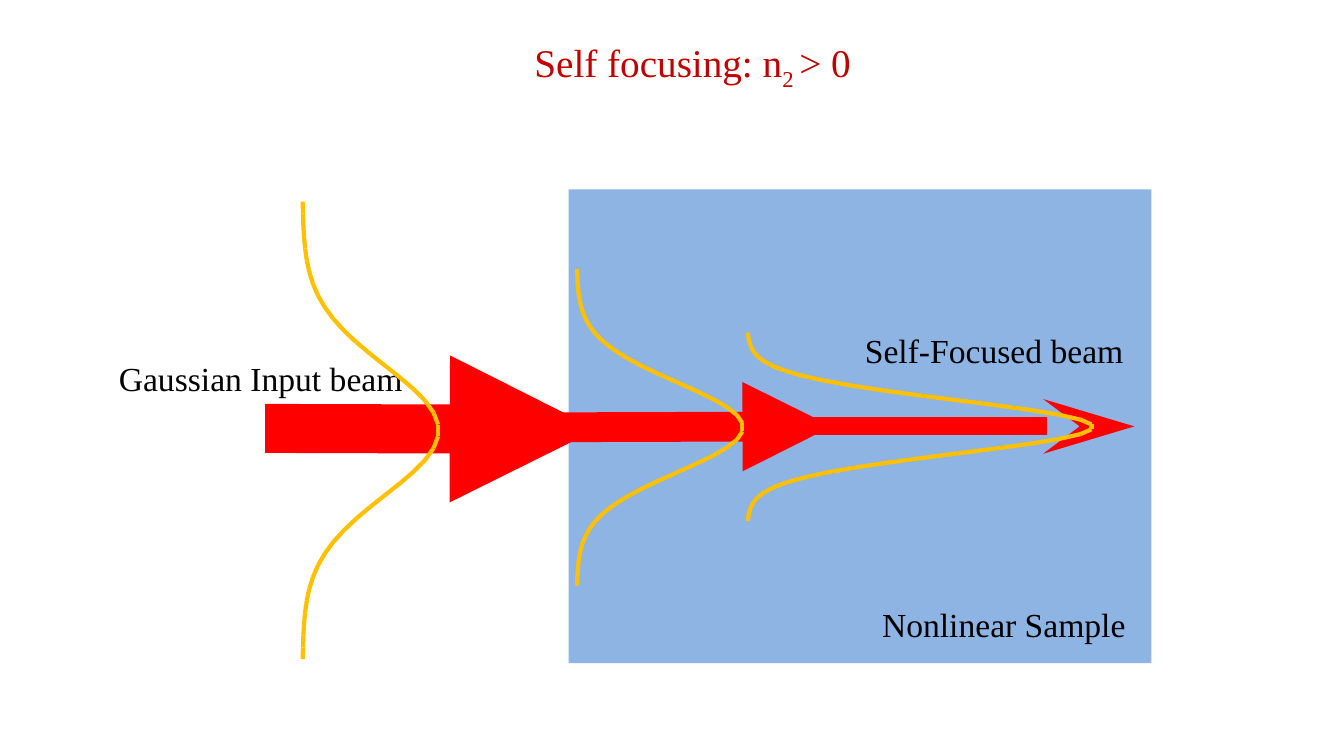
"""Build a slide that shows a Gaussian beam focusing itself in a nonlinear sample."""
import itertools
import math

import pptx
import pptx.dml.color
import pptx.enum.shapes
import pptx.enum.text
import pptx.oxml.ns
import pptx.util
from lxml import etree

Inches = pptx.util.Inches
Pt = pptx.util.Pt
RGBColor = pptx.dml.color.RGBColor

BLACK = RGBColor(0x00, 0x00, 0x00)
CRIMSON = RGBColor(0xC0, 0x00, 0x00)
RED = RGBColor(0xFF, 0x00, 0x00)
AMBER = RGBColor(0xFF, 0xC0, 0x00)
BLUE = RGBColor(0x8E, 0xB4, 0xE3)
FONT = "Times New Roman"
STEPS = 39
SPREAD = 0.283


def place(shape, left, top, width, height):
    shape.left, shape.top = Inches(left), Inches(top)
    shape.width, shape.height = Inches(width), Inches(height)


def style(para, size, color):
    para.alignment = pptx.enum.text.PP_ALIGN.LEFT
    para.font.name = FONT
    para.font.size = Pt(size)
    para.font.color.rgb = color


def set_title(slide):
    title = slide.shapes.title
    place(title, 5.2, 0.33, 3.4, 0.57)
    frame = title.text_frame
    frame.word_wrap = False
    frame.auto_size = pptx.enum.text.MSO_AUTO_SIZE.SHAPE_TO_FIT_TEXT
    frame.vertical_anchor = pptx.enum.text.MSO_ANCHOR.TOP
    para = frame.paragraphs[0]
    style(para, 28, CRIMSON)
    for text, base in (("Self focusing: n", 0), ("2 ", -25000), ("> 0", 0)):
        run = para.add_run()
        run.text = text
        if base:
            run.font._element.set("baseline", str(base))


def add_sample(slide):
    kind = pptx.enum.shapes.MSO_SHAPE.RECTANGLE
    sample = slide.shapes.add_shape(
        kind, Inches(5.64), Inches(1.88), Inches(5.78), Inches(4.7))
    sample.shadow.inherit = False
    sample.fill.solid()
    sample.fill.fore_color.rgb = BLUE
    sample.line.fill.background()


def add_label(slide, text, left, top, width, wrap=False):
    box = slide.shapes.add_textbox(
        Inches(left), Inches(top), Inches(width), Inches(0.51))
    frame = box.text_frame
    frame.word_wrap = wrap
    frame.auto_size = pptx.enum.text.MSO_AUTO_SIZE.SHAPE_TO_FIT_TEXT
    frame.text = text
    style(frame.paragraphs[0], 24, BLACK)


def add_line(shapes, start, end, color, width):
    kind = pptx.enum.shapes.MSO_CONNECTOR.STRAIGHT
    line = shapes.add_connector(
        kind, *(Inches(value) for value in start + end))
    line.line.color.rgb = color
    line.line.width = Pt(width)
    etree.SubElement(line._element.spPr, pptx.oxml.ns.qn("a:effectLst"))
    return line


def add_beam(slide, start, end, width, head, length="med"):
    beam = add_line(slide.shapes, start, end, RED, width)
    etree.SubElement(beam.line._get_or_add_ln(), pptx.oxml.ns.qn("a:tailEnd"),
                     type=head, w="med", len=length)


def add_curve(slide, base, peak, top, bottom):
    middle, half = (top + bottom) / 2, (bottom - top) / 2
    points = []
    for step in range(STEPS + 1):
        ratio = 2 * step / STEPS - 1
        bulge = math.exp(-((ratio / SPREAD) ** 2) / 2)
        points.append((base + (peak - base) * bulge, middle + half * ratio))
    group = slide.shapes.add_group_shape()
    for start, end in itertools.pairwise(points):
        add_line(group.shapes, start, end, AMBER, 3)


def main():
    deck = pptx.Presentation()
    deck.slide_width, deck.slide_height = Inches(13.33), Inches(7.5)
    slide = deck.slides.add_slide(deck.slide_layouts.get_by_name("Title Only"))
    set_title(slide)
    add_sample(slide)
    add_label(slide, "Nonlinear Sample", 8.65, 5.94, 2.64)
    add_label(slide, "Self-Focused beam", 8.48, 3.22, 2.79)
    add_label(slide, "Gaussian Input beam", 1.08, 3.5, 3.19, wrap=True)
    add_beam(slide, (5.18, 4.24), (8.25, 4.23), 21.25, "triangle")
    add_beam(slide, (2.63, 4.25), (5.92, 4.26), 35, "triangle")
    add_beam(slide, (7.11, 4.23), (11.25, 4.23), 13, "stealth", "lg")
    add_curve(slide, 3, 4.35, 2, 6.54)
    add_curve(slide, 5.72, 7.37, 2.67, 5.81)
    add_curve(slide, 7.41, 10.84, 3.3, 5.17)
    deck.save("out.pptx")


if __name__ == "__main__":
    main()
